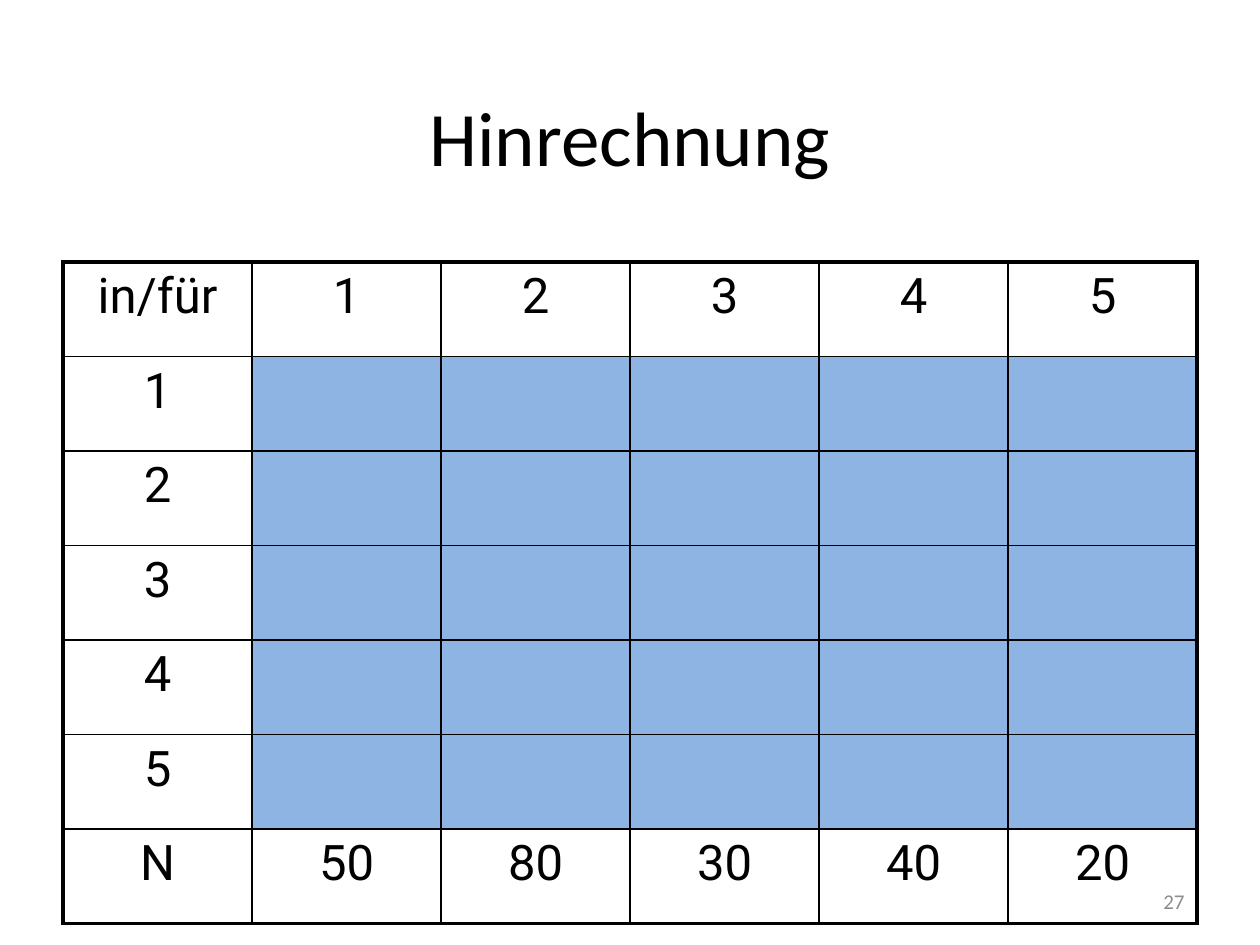
from lxml.etree import SubElement
from pptx import Presentation
from pptx.dml.color import RGBColor
from pptx.enum.text import MSO_ANCHOR, PP_ALIGN
from pptx.oxml.ns import qn
from pptx.util import Inches, Pt

BLACK = RGBColor(0x00, 0x00, 0x00)
WHITE = RGBColor(0xFF, 0xFF, 0xFF)
BLUE = RGBColor(0x8E, 0xB4, 0xE3)
GRAY = RGBColor(0x8C, 0x8C, 0x8C)


def format_text(text_frame, font_name, size, color, alignment):
    for para in text_frame.paragraphs:
        para.alignment = alignment
        for span in para.runs:
            span.font.name = font_name
            span.font.size = Pt(size)
            span.font.color.rgb = color


def add_border(cell, side, width):
    line = SubElement(cell._tc.get_or_add_tcPr(), qn(f"a:ln{side}"), w=str(Pt(width)))
    fill = SubElement(line, qn("a:solidFill"))
    SubElement(fill, qn("a:srgbClr"), val=str(BLACK))


deck = Presentation()
deck.slide_width = Inches(10)
deck.slide_height = Inches(7.5)
page = deck.slides.add_slide(deck.slide_layouts[5])

title = page.shapes.title
title.left, title.top = Inches(0.5), Inches(0.32)
title.width, title.height = Inches(9), Inches(1.51)
title.text_frame.text = "Hinrechnung"
title.text_frame.vertical_anchor = MSO_ANCHOR.MIDDLE
format_text(title.text_frame, "Calibri", 44, BLACK, PP_ALIGN.CENTER)

periods = ["1", "2", "3", "4", "5"]
rows = [["in/für"] + periods]
rows += [[period] + [""] * len(periods) for period in periods]
rows += [["N", "50", "80", "30", "40", "20"]]
last_row = len(rows) - 1
last_column = len(periods)

table = page.shapes.add_table(
    len(rows), last_column + 1, Inches(0.5), Inches(2.08), Inches(9), Inches(5.25)
).table
for column in table.columns:
    column.width = Inches(1.5)
for row in table.rows:
    row.height = Inches(0.75)

for r, values in enumerate(rows):
    for c, value in enumerate(values):
        cell = table.cell(r, c)
        cell.text_frame.text = value
        format_text(cell.text_frame, "Roboto", 28, BLACK, PP_ALIGN.CENTER)
        outer_sides = {"L": c == 0, "R": c == last_column, "T": r == 0, "B": r == last_row}
        for side, is_outer in outer_sides.items():
            add_border(cell, side, 2.25 if is_outer else 1)
        cell.fill.solid()
        cell.fill.fore_color.rgb = WHITE if value else BLUE

number_box = page.shapes.add_textbox(Inches(7.17), Inches(6.95), Inches(2.33), Inches(0.4))
number_box.text_frame.word_wrap = True
number_box.text_frame.vertical_anchor = MSO_ANCHOR.MIDDLE
number_box.text_frame.text = "27"
format_text(number_box.text_frame, "Calibri", 12, GRAY, PP_ALIGN.RIGHT)

deck.save("out.pptx")
